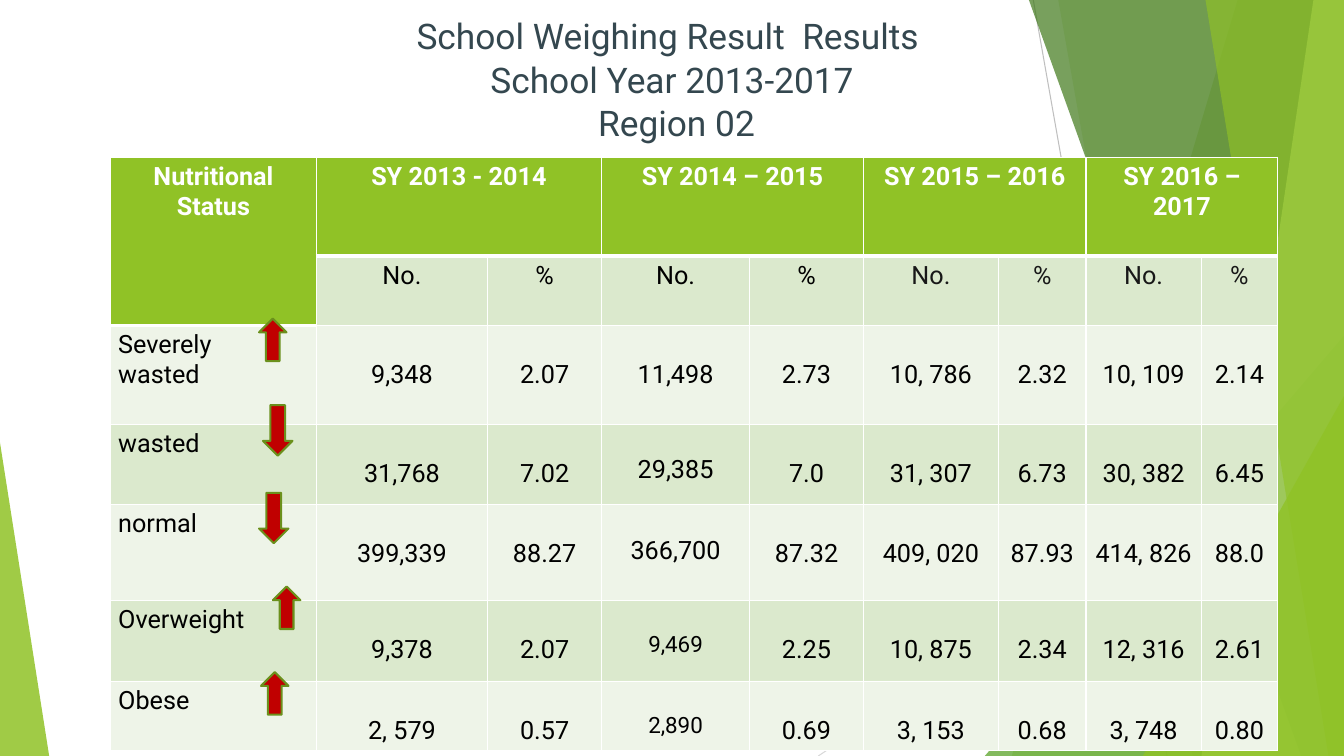
from lxml import etree
from pptx import Presentation
from pptx.dml.color import RGBColor
from pptx.enum.shapes import MSO_CONNECTOR, MSO_SHAPE
from pptx.enum.text import MSO_ANCHOR, PP_ALIGN
from pptx.oxml import parse_xml
from pptx.oxml.ns import nsdecls, qn
from pptx.util import Cm, Pt

FONT = "Roboto"
WHITE = RGBColor(0xFF, 0xFF, 0xFF)
BLACK = RGBColor(0x00, 0x00, 0x00)
NEAR_BLACK = RGBColor(0x18, 0x18, 0x18)
SLATE = RGBColor(0x34, 0x47, 0x4F)
GREY = RGBColor(0xBF, 0xBF, 0xBF)
LIGHT_GREY = RGBColor(0xD9, 0xD9, 0xD9)
GREEN = RGBColor(0x90, 0xC2, 0x26)
MID_GREEN = RGBColor(0x54, 0xA0, 0x21)
DARK_GREEN = RGBColor(0x3F, 0x78, 0x19)
LIME = RGBColor(0xC0, 0xE4, 0x74)
BAND_DARK = RGBColor(0xDB, 0xE9, 0xCD)
BAND_LIGHT = RGBColor(0xEE, 0xF4, 0xE8)
RED = RGBColor(0xC0, 0x00, 0x00)
ARROW_EDGE = RGBColor(0x6B, 0x90, 0x1C)

SLIDE_WIDTH, SLIDE_HEIGHT = 33.87, 19.05
COLUMN_WIDTHS = [5.18, 4.32, 2.87, 3.73, 2.87, 3.4, 2.21, 2.9, 1.93]
ROW_HEIGHTS = [2.49, 1.74, 2.49, 2.02, 2.42, 2.04, 1.75]
YEARS = ["SY 2013 - 2014", "SY 2014 – 2015", "SY 2015 – 2016", "SY 2016 – 2017"]
RESULTS = [
    ["Severely\nwasted", "9,348", "2.07", "11,498", "2.73", "10, 786", "2.32", "10, 109", "2.14"],
    ["wasted", "31,768", "7.02", "29,385", "7.0", "31, 307", "6.73", "30, 382", "6.45"],
    ["normal", "399,339", "88.27", "366,700", "87.32", "409, 020", "87.93", "414, 826", "88.0"],
    ["Overweight", "9,378", "2.07", "9,469", "2.25", "10, 875", "2.34", "12, 316", "2.61"],
    ["Obese", "2, 579", "0.57", "2,890", "0.69", "3, 153", "0.68", "3, 748", "0.80"],
]
# Left and top of each trend arrow
RISING = [(6.53, 8.03), (6.88, 14.78), (6.58, 16.94)]
FALLING = [(6.63, 10.21), (6.53, 12.42)]


def paint(shape, color, opacity):
    shape.shadow.inherit = False
    shape.line.fill.background()
    shape.fill.solid()
    shape.fill.fore_color.rgb = color
    color_element = shape.element.spPr.find(qn("a:solidFill"))[0]
    etree.SubElement(color_element, qn("a:alpha"), val=str(opacity * 1000))


def add_panel(slide, top_x, bottom_x, color, opacity):
    """Band from a slanted left edge to the right side of the slide."""
    corners = [(SLIDE_WIDTH, 0), (SLIDE_WIDTH, SLIDE_HEIGHT), (bottom_x, SLIDE_HEIGHT)]
    builder = slide.shapes.build_freeform(Cm(top_x), 0)
    builder.add_line_segments([(Cm(x), Cm(y)) for x, y in corners])
    paint(builder.convert_to_shape(), color, opacity)


def add_triangle(slide, left, top, width, apex, color, opacity):
    shape = slide.shapes.add_shape(
        MSO_SHAPE.ISOSCELES_TRIANGLE, Cm(left), Cm(top), Cm(width), Cm(SLIDE_HEIGHT - top))
    shape.adjustments[0] = apex
    paint(shape, color, opacity)


def add_thin_line(slide, start, end, color):
    line = slide.shapes.add_connector(
        MSO_CONNECTOR.STRAIGHT, *[Cm(value) for value in start + end])
    line.line.color.rgb = color
    line.line.width = Pt(0.75)
    etree.SubElement(line.element.spPr, qn("a:effectLst"))


def add_backdrop(slide):
    add_thin_line(slide, (26.04, 0), (29.41, SLIDE_HEIGHT), GREY)
    add_thin_line(slide, (SLIDE_WIDTH, 10.24), (20.62, SLIDE_HEIGHT), LIGHT_GREY)
    add_panel(slide, 31.19, 25.5, GREEN, 30)
    add_panel(slide, 26.67, 30.05, GREEN, 20)
    add_triangle(slide, 24.82, 8.46, 9.05, 1, MID_GREEN, 72)
    add_panel(slide, 25.93, 32.79, DARK_GREEN, 70)
    add_panel(slide, 33.1, 30.28, LIME, 70)
    add_panel(slide, 30.38, 33.48, GREEN, 65)
    add_triangle(slide, 28.8, 9.98, 5.07, 1, GREEN, 80)
    add_triangle(slide, 0, 11.15, 1.24, 0, GREEN, 85)


def format_paragraphs(text_frame, size, color, bold=False, alignment=PP_ALIGN.CENTER):
    for paragraph in text_frame.paragraphs:
        paragraph.alignment = alignment
        font = paragraph.font
        font.name, font.size, font.bold = FONT, Pt(size), bold
        font.color.rgb = color


def set_title(slide):
    title = slide.shapes.title
    title.left, title.top, title.width, title.height = Cm(5.51), Cm(0.2), Cm(22.86), Cm(3.18)
    frame = title.text_frame
    frame.text = "School Weighing Result  Results \vSchool Year 2013-2017\v Region 02"
    frame.vertical_anchor = MSO_ANCHOR.TOP
    format_paragraphs(frame, 25.2, SLATE)
    frame.paragraphs[0].line_spacing = 1.03
    # Bring the title in front of the backdrop
    title.element.getparent().append(title.element)


def set_borders(cell, bottom_width):
    properties = cell._tc.get_or_add_tcPr()
    widths = {"lnL": 1, "lnR": 1, "lnT": 1, "lnB": bottom_width}
    for index, (side, width) in enumerate(widths.items()):
        properties.insert(index, parse_xml(
            f'<a:{side} {nsdecls("a")} w="{Pt(width)}"><a:solidFill>'
            f'<a:srgbClr val="{WHITE}"/></a:solidFill></a:{side}>'))


def fill_cell(cell, text, fill, size=18, color=BLACK, bold=False,
              alignment=PP_ALIGN.CENTER, top=0.13):
    cell.text = text
    cell.margin_left = cell.margin_right = Cm(0.19)
    cell.margin_top, cell.margin_bottom = Cm(top), Cm(0.13)
    cell.fill.solid()
    cell.fill.fore_color.rgb = fill
    format_paragraphs(cell.text_frame, size, color, bold, alignment)


def add_results_table(slide):
    table = slide.shapes.add_table(
        len(ROW_HEIGHTS), len(COLUMN_WIDTHS), Cm(2.79), Cm(3.96),
        Cm(sum(COLUMN_WIDTHS)), Cm(sum(ROW_HEIGHTS))).table
    table.first_row = table.horz_banding = False
    for column, width in zip(table.columns, COLUMN_WIDTHS):
        column.width = Cm(width)
    for row, height in zip(table.rows, ROW_HEIGHTS):
        row.height = Cm(height)

    # Two header rows
    fill_cell(table.cell(0, 0), "Nutritional Status", GREEN, color=WHITE, bold=True)
    for index, year in enumerate(YEARS):
        column = 1 + 2 * index
        fill_cell(table.cell(0, column), year, GREEN, color=WHITE, bold=True)
        for offset, heading in enumerate(["No.", "%"]):
            fill_cell(table.cell(1, column + offset), heading, BAND_DARK,
                      color=BLACK if index < 2 else NEAR_BLACK)

    # Result rows, figures set one line lower than the labels
    for row, values in enumerate(RESULTS, start=2):
        band = BAND_DARK if row % 2 else BAND_LIGHT
        for column, value in enumerate(values):
            cell = table.cell(row, column)
            if column == 0:
                fill_cell(cell, value, band, alignment=PP_ALIGN.LEFT)
            elif column == 3:
                fill_cell(cell, value, band, size=16 if row >= 5 else 18, top=0.79)
            else:
                fill_cell(cell, value, band, top=0.87)
    severely_wasted = table.cell(2, 3)
    severely_wasted.margin_top = severely_wasted.margin_bottom = Cm(0.02)
    severely_wasted.vertical_anchor = MSO_ANCHOR.MIDDLE

    # Borders and merged headers
    for row in range(len(ROW_HEIGHTS)):
        for column in range(len(COLUMN_WIDTHS)):
            heavy = row == 0 or (row == 1 and column == 0)
            set_borders(table.cell(row, column), 3 if heavy else 1)
    table.cell(0, 0).merge(table.cell(1, 0))
    for column in range(1, len(COLUMN_WIDTHS), 2):
        table.cell(0, column).merge(table.cell(0, column + 1))


def add_trend_arrow(slide, kind, left, top, width, height):
    arrow = slide.shapes.add_shape(kind, Cm(left), Cm(top), Cm(width), Cm(height))
    arrow.shadow.inherit = False
    arrow.fill.solid()
    arrow.fill.fore_color.rgb = RED
    arrow.line.color.rgb = ARROW_EDGE
    arrow.line.width = Pt(1.5)


def main():
    presentation = Presentation()
    presentation.slide_width, presentation.slide_height = Cm(SLIDE_WIDTH), Cm(SLIDE_HEIGHT)
    slide = presentation.slides.add_slide(presentation.slide_layouts[5])
    add_backdrop(slide)
    set_title(slide)
    add_results_table(slide)
    for left, top in FALLING:
        add_trend_arrow(slide, MSO_SHAPE.DOWN_ARROW, left, top, 0.74, 1.27)
    for left, top in RISING:
        add_trend_arrow(slide, MSO_SHAPE.UP_ARROW, left, top, 0.69, 1.07)
    presentation.save("out.pptx")


if __name__ == "__main__":
    main()
